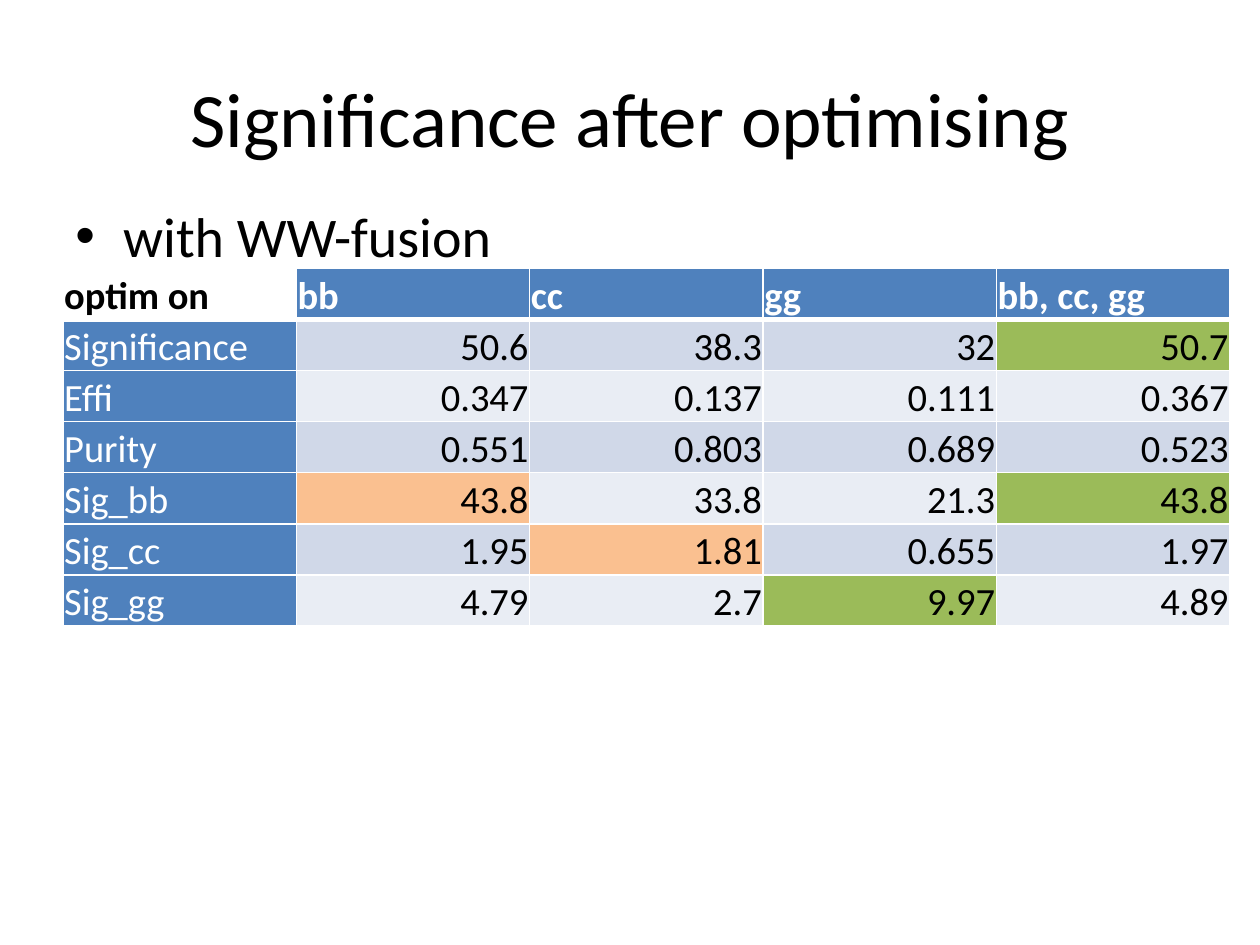
"""Build the slide on significance after optimising."""
import lxml.etree
import pptx
import pptx.dml.color
import pptx.enum.text
import pptx.oxml.ns
import pptx.util

BLACK = pptx.dml.color.RGBColor(0x00, 0x00, 0x00)
WHITE = pptx.dml.color.RGBColor(0xFF, 0xFF, 0xFF)
BLUE = pptx.dml.color.RGBColor(0x4F, 0x81, 0xBD)
DARK = pptx.dml.color.RGBColor(0xD0, 0xD8, 0xE8)
LIGHT = pptx.dml.color.RGBColor(0xE9, 0xED, 0xF4)
GREEN = pptx.dml.color.RGBColor(0x9B, 0xBB, 0x59)
ORANGE = pptx.dml.color.RGBColor(0xFA, 0xC0, 0x90)

ALIGN = pptx.enum.text.PP_ALIGN
ANCHOR = pptx.enum.text.MSO_ANCHOR
inch = pptx.util.Inches
qn = pptx.oxml.ns.qn

ROWS = [
    ["optim on", "bb", "cc", "gg", "bb, cc, gg"],
    ["Significance", "50.6", "38.3", "32", "50.7"],
    ["Effi", "0.347", "0.137", "0.111", "0.367"],
    ["Purity", "0.551", "0.803", "0.689", "0.523"],
    ["Sig_bb", "43.8", "33.8", "21.3", "43.8"],
    ["Sig_cc", "1.95", "1.81", "0.655", "1.97"],
    ["Sig_gg", "4.79", "2.7", "9.97", "4.89"],
]
MARKS = {(1, 4): GREEN, (4, 1): ORANGE, (4, 4): GREEN, (5, 2): ORANGE, (6, 3): GREEN}


def style(para, size, color, align=ALIGN.LEFT, bold=False):
    para.alignment = align
    para.font.name = "Calibri"
    para.font.size = pptx.util.Pt(size)
    para.font.bold = bold
    para.font.color.rgb = color


def edge(cell, side, width):
    line = lxml.etree.SubElement(
        cell._tc.get_or_add_tcPr(), qn("a:ln" + side), w=str(pptx.util.Pt(width)))
    fill = lxml.etree.SubElement(line, qn("a:solidFill"))
    lxml.etree.SubElement(fill, qn("a:srgbClr"), val=str(WHITE))


deck = pptx.Presentation()
deck.slide_width, deck.slide_height = inch(10), inch(7.5)
slide = deck.slides.add_slide(deck.slide_layouts[6])
left = int(deck.slide_width * 0.05)
wide = deck.slide_width - 2 * left

title = slide.shapes.add_textbox(left, inch(0.3), wide, inch(1.25)).text_frame
title.word_wrap = True
title.vertical_anchor = ANCHOR.MIDDLE
title.text = "Significance after optimising"
style(title.paragraphs[0], 44, BLACK, ALIGN.CENTER)

count, span = len(ROWS), len(ROWS[0])
frame = slide.shapes.add_table(count, span, left, inch(2.13), inch(9.26), inch(2.84))
table = frame.table
for r, row in enumerate(ROWS):
    for c, text in enumerate(row):
        cell = table.cell(r, c)
        cell.margin_left = cell.margin_right = cell.margin_top = inch(0.01)
        cell.margin_bottom = 0
        cell.vertical_anchor = ANCHOR.BOTTOM
        for side in "LRTB":
            thick = (r, side) in ((0, "B"), (1, "T"))
            edge(cell, side, 3 if thick else 1)
        head = r == 0 or c == 0
        if r == c == 0:
            cell.fill.background()
        else:
            cell.fill.solid()
            plain = BLUE if head else DARK if r % 2 else LIGHT
            cell.fill.fore_color.rgb = MARKS.get((r, c), plain)
        cell.text = text
        color = WHITE if head and r + c else BLACK
        align = ALIGN.LEFT if head else ALIGN.RIGHT
        style(cell.text_frame.paragraphs[0], 22, color, align, r == 0)

body = slide.shapes.add_textbox(left, inch(1.55), wide, inch(5.15)).text_frame
body.word_wrap = True
body.text = "with WW-fusion"
item = body.paragraphs[0]
props = item._p.get_or_add_pPr()
props.set("marL", str(inch(0.38)))
props.set("indent", str(inch(-0.38)))
lxml.etree.SubElement(props, qn("a:buFont"), typeface="Arial")
lxml.etree.SubElement(props, qn("a:buChar"), char="•")
style(item, 32, BLACK)

deck.save("out.pptx")
